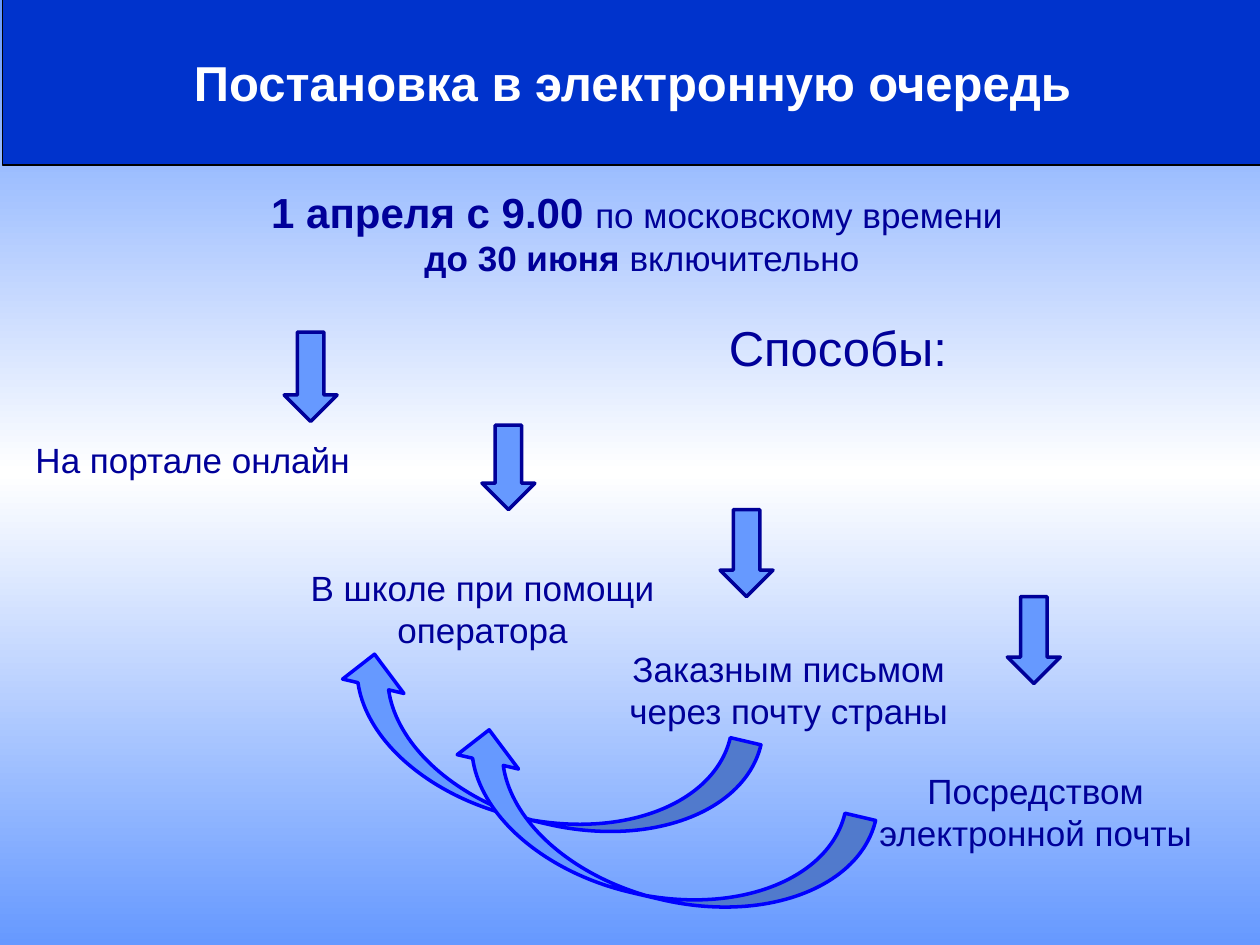
"""Build the slide on joining the electronic queue."""
from copy import deepcopy

from pptx import Presentation
from pptx import util as u
from pptx.dml.color import RGBColor
from pptx.enum import shapes, text

WIDE, HIGH = u.Inches(10), u.Inches(7.5)
COLS, ROWS = 100, 75
FONT = "Arial"
BAND = RGBColor(0x00, 0x33, 0xCC)
NAVY = RGBColor(0x00, 0x00, 0x99)
SKY = RGBColor(0x66, 0x99, 0xFF)
BLUE = RGBColor(0x00, 0x00, 0xFF)
WHITE = RGBColor(0xFF, 0xFF, 0xFF)
BLACK = RGBColor(0x00, 0x00, 0x00)


def place(box, col, row, cols, rows):
    """Turn grid cells counted from the corner of a box into lengths."""
    across, down = WIDE / COLS, HIGH / ROWS
    return [round(n) for n in ((box[0] + col) * across, (box[1] + row) * down,
                               cols * across, rows * down)]


def write(frame, lines, size=20, color=NAVY, wrap=True,
          anchor=text.MSO_ANCHOR.TOP):
    """Write centred lines, each a list of (words, bold, own size) runs."""
    frame.word_wrap = wrap
    frame.auto_size = text.MSO_AUTO_SIZE.NONE
    frame.vertical_anchor = anchor
    for i, line in enumerate(lines):
        para = frame.paragraphs[0] if i == 0 else frame.add_paragraph()
        para.alignment = text.PP_ALIGN.CENTER
        for words, bold, own in line:
            run = para.add_run()
            run.text = words
            font = run.font
            font.name, font.bold, font.size = FONT, bold, u.Pt(own or size)
            font.color.rgb = color


def paint(shape, fill, line, width):
    """Give a shape a plain fill and outline."""
    shape.fill.solid()
    shape.fill.fore_color.rgb = fill
    shape.line.color.rgb = line
    shape.line.width = u.Pt(width)


def arrow(slide, kind, spot, turn, line):
    """Add a turned block arrow."""
    shape = slide.shapes.add_shape(kind, *spot)
    shape.rotation = turn
    shape.shadow.inherit = False
    paint(shape, SKY, line, 2)


def label(slide, spot, lines, **form):
    """Add a text box with formatted lines."""
    write(slide.shapes.add_textbox(*spot).text_frame, lines, **form)


def shade(slide):
    """Fill the background with a blue, white, blue gradient."""
    fill = slide.background.fill
    fill.gradient()
    fill.gradient_angle = 90
    first = slide.element.xpath(".//p:bg//a:gs")[0]
    first.addnext(deepcopy(first))
    for stop, pos, color in zip(fill.gradient_stops, (0, 0.5, 1),
                                (SKY, WHITE, SKY)):
        stop.position, stop.color.rgb = pos, color


def head(slide, box):
    """Turn the title into a filled band."""
    title = slide.shapes.title
    title.left, title.top, title.width, title.height = place(
        box, 0, 0, *box[2:])
    paint(title, BAND, BLACK, 0.75)
    write(title.text_frame, [[("Постановка в электронную очередь", True, 28)]],
          color=WHITE, wrap=False, anchor=text.MSO_ANCHOR.MIDDLE)


def dates(slide, box):
    """Show the dates and the heading of the ways below them."""
    label(slide, place(box, 0, 0, box[2], 8.4), [
        [("1 апреля с 9.00 ", True, 24), ("по московскому времени ", False, 20)],
        [("до 30 июня ", True, 20), ("включительно", False, 20)]])
    label(slide, place(box, 49.2, 10.4, 26, 5.7),
          [[("Способы:", False, 28)]])


def ways(slide, box):
    """Step the four ways down the box, each under its arrow."""
    steps = (("На портале онлайн", -0.4, 8.3, 4.4, 24.65, 3.9, 7.1),
             ("В школе при помощи оператора", 22.6, 18.5, 7.7, 40.35, 11.1, 6.7),
             ("Заказным письмом через почту страны",
              46.9, 24.9, 7.7, 59.25, 17.9, 6.9),
             ("Посредством электронной почты",
              66.5, 34.6, 7.7, 82.05, 24.8, 6.9))
    thick = 4.2
    for words, col, row, tall, mid, level, span in steps:
        arrow(slide, shapes.MSO_SHAPE.RIGHT_ARROW,
              place(box, mid - span / 2, level - thick / 2, span, thick),
              90, NAVY)
        label(slide, place(box, col, row, 31.4, tall), [[(words, False, 20)]])


def loops(slide, box):
    """Bend two arrows back from the mail ways to the school."""
    for i in range(2):
        arrow(slide, shapes.MSO_SHAPE.CURVED_LEFT_ARROW,
              place(box, 9.1 * i, 6 * i, 10, 34), 103.2, BLUE)


def main():
    """Build and save the slide."""
    deck = Presentation()
    deck.slide_width, deck.slide_height = WIDE, HIGH
    slide = deck.slides.add_slide(deck.slide_layouts[5])
    shade(slide)
    head(slide, (0.2, -0.1, 100, 13.2))
    dates(slide, (4.3, 14.3, 93.3, 16.1))
    ways(slide, (0, 26, 100, 43))
    loops(slide, (37.7, 43.1, 19.1, 40))
    deck.save("out.pptx")


if __name__ == "__main__":
    main()
